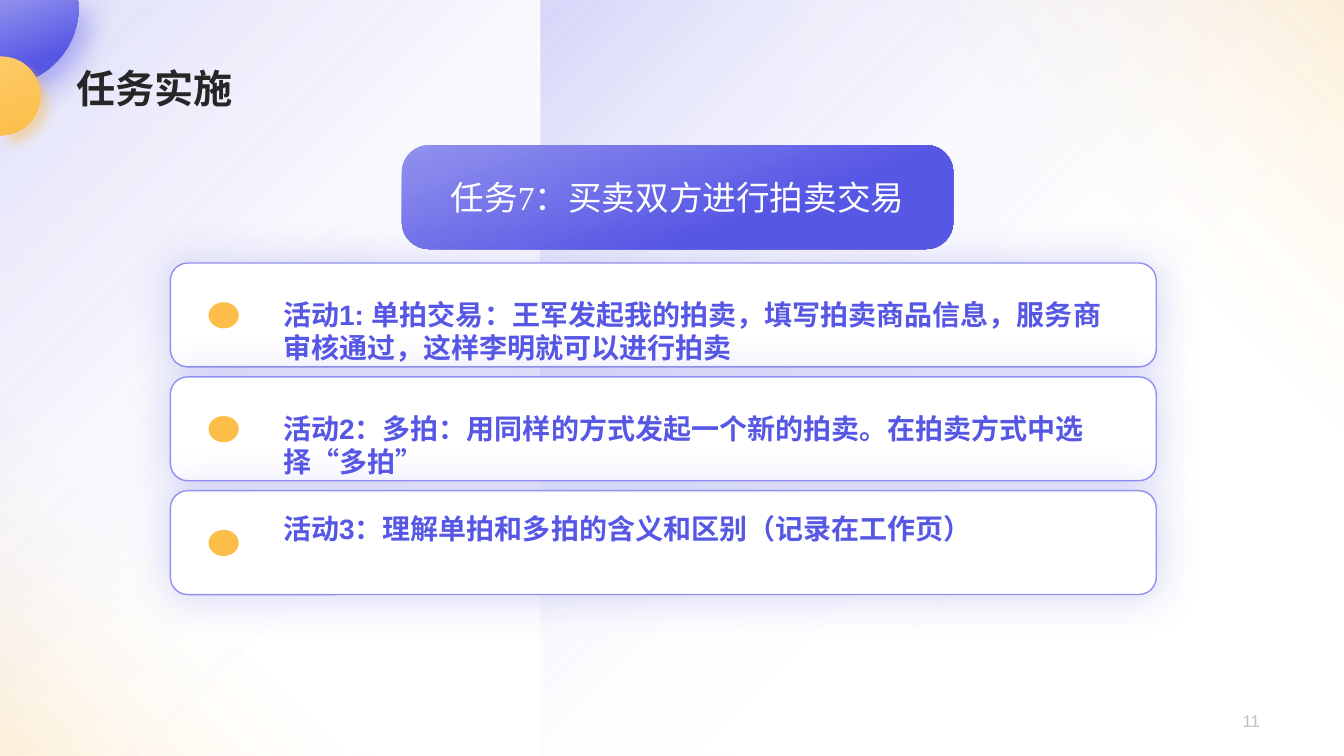
"""Build the auction task slide with its banner and three activity cards."""
from dataclasses import dataclass
from math import cos, radians, sin

from pptx import Presentation
from pptx.dml.color import RGBColor
from pptx.enum.shapes import MSO_SHAPE as Preset
from pptx.enum.text import MSO_ANCHOR as Anchor, MSO_AUTO_SIZE as AutoSize, PP_ALIGN as Align
from pptx.oxml import parse_xml
from pptx.oxml.ns import nsdecls, qn
from pptx.util import Pt

WIDTH, HEIGHT = 960, 540
INDIGO, LAVENDER = "5757E5", "9191EE"
AMBER, LIGHT_AMBER = "FCBE49", "FDCB67"
WHITE, DARK, GREY = "FFFFFF", "262626", "BFBFBF"


@dataclass(frozen=True)
class Stop:
    position: int
    color: str
    opacity: int = 100


@dataclass(frozen=True)
class Gradient:
    stops: tuple[Stop, ...]
    angle: int | None = None


@dataclass(frozen=True)
class Shadow:
    color: str
    opacity: int
    blur: float
    distance: float = 0
    angle: int = 0


@dataclass(frozen=True)
class Box:
    left: float
    top: float
    width: float
    height: float

    def lengths(self) -> tuple:
        return Pt(self.left), Pt(self.top), Pt(self.width), Pt(self.height)


@dataclass(frozen=True)
class Glow:
    box: Box
    gradient: Gradient
    flipped: bool = False


@dataclass(frozen=True)
class Disc:
    center_x: float
    center_y: float
    radius: float
    start_angle: float
    gradient: Gradient
    shadow: Shadow


@dataclass(frozen=True)
class Activity:
    text: str
    text_offset: float
    text_height: float


INDIGO_GLOW = Gradient((Stop(0, INDIGO, 20), Stop(65, WHITE, 0)))
AMBER_GLOW = Gradient((Stop(45, WHITE, 0), Stop(98, AMBER, 20)), 315)
INDIGO_FADE = Gradient((Stop(0, LAVENDER), Stop(66, INDIGO)), 70)
AMBER_FADE = Gradient((Stop(0, LIGHT_AMBER), Stop(100, AMBER)), 70)
CARD_SHADOW = Shadow(INDIGO, 25, 30)

GLOWS = (
    Glow(Box(0, 0, 564.5, HEIGHT), INDIGO_GLOW),
    Glow(Box(626.2, 0, 333.8, 348.5), AMBER_GLOW),
    Glow(Box(-1.2, 280.8, 288.7, 259.2), AMBER_GLOW, True),
    Glow(Box(386.4, 0, 573.6, HEIGHT), INDIGO_GLOW, True),
)
DISCS = (
    Disc(0, 5, 56.2, -5.1, INDIGO_FADE, Shadow(INDIGO, 40, 19, 11, 45)),
    Disc(0.7, 68.4, 28.1, -90, AMBER_FADE, Shadow(AMBER, 40, 7, 8, 45)),
)
ACTIVITIES = (
    Activity("活动1: 单拍交易：王军发起我的拍卖，填写拍卖商品信息，服务商审核通过，这样李明就可以进行拍卖", 20.9, 55.4),
    Activity("活动2：多拍：用同样的方式发起一个新的拍卖。在拍卖方式中选择“多拍”", 20.9, 55.4),
    Activity("活动3：理解单拍和多拍的含义和区别（记录在工作页）", 11.5, 31.7),
)
CARD = Box(121.7, 187.9, 704.2, 74.2)
CARD_PITCH = 81.3


def color_xml(color: str, opacity: int) -> str:
    return f'<a:srgbClr val="{color}"><a:alpha val="{opacity * 1000}"/></a:srgbClr>'


def gradient_xml(gradient: Gradient) -> str:
    stops = "".join(f'<a:gs pos="{stop.position * 1000}">{color_xml(stop.color, stop.opacity)}</a:gs>'
                    for stop in gradient.stops)
    if gradient.angle is None:
        direction = '<a:path path="circle"><a:fillToRect r="100000" b="100000"/></a:path>'
    else:
        direction = f'<a:lin ang="{gradient.angle * 60000}" scaled="0"/>'
    return f'<a:gradFill {nsdecls("a")} rotWithShape="1"><a:gsLst>{stops}</a:gsLst>{direction}</a:gradFill>'


def style(shape, fill: str | Gradient, line: str | None = None, shadow: Shadow | None = None) -> None:
    properties = shape._element.spPr
    if isinstance(fill, Gradient):
        shape.fill.background()
        properties.replace(properties.find(qn("a:noFill")), parse_xml(gradient_xml(fill)))
    else:
        shape.fill.solid()
        shape.fill.fore_color.rgb = RGBColor.from_string(fill)
    if line:
        shape.line.color.rgb = RGBColor.from_string(line)
        shape.line.width = Pt(1)
    else:
        shape.line.fill.background()
    shape.shadow.inherit = False
    if shadow:
        properties.find(qn("a:effectLst")).append(parse_xml(
            f'<a:outerShdw {nsdecls("a")} blurRad="{Pt(shadow.blur)}" dist="{Pt(shadow.distance)}" '
            f'dir="{shadow.angle * 60000}" algn="ctr" rotWithShape="0">'
            f'{color_xml(shadow.color, shadow.opacity)}</a:outerShdw>'))


def add_preset(shapes, preset: Preset, box: Box, fill: str | Gradient, **effects):
    shape = shapes.add_shape(preset, *box.lengths())
    style(shape, fill, **effects)
    return shape


def write(shape, text: str, *, size: float, color: str, font: str = "Arial", bold: bool = False,
          align: Align = Align.LEFT, anchor: Anchor = Anchor.TOP, auto_size: AutoSize = AutoSize.NONE,
          line_spacing: float | None = None) -> None:
    frame = shape.text_frame
    frame.word_wrap = True
    frame.auto_size = auto_size
    frame.vertical_anchor = anchor
    paragraph = frame.paragraphs[0]
    paragraph.alignment = align
    paragraph.line_spacing = line_spacing
    run = paragraph.add_run()
    run.text = text
    run.font.name, run.font.size, run.font.bold = font, Pt(size), bold
    run.font.color.rgb = RGBColor.from_string(color)


def add_glow(shapes, glow: Glow) -> None:
    shape = add_preset(shapes, Preset.RECTANGLE, glow.box, glow.gradient)
    if glow.flipped:
        for axis in ("flipH", "flipV"):
            shape._element.spPr.xfrm.set(axis, "1")


def add_disc(shapes, disc: Disc) -> None:
    steps = 48
    angles = [radians(disc.start_angle + (90 - disc.start_angle) * step / steps) for step in range(steps + 1)]
    arc = [(Pt(disc.center_x + disc.radius * cos(angle)), Pt(disc.center_y + disc.radius * sin(angle)))
           for angle in angles]
    builder = shapes.build_freeform(*arc[0], scale=1.0)
    builder.add_line_segments([*arc[1:], (0, arc[-1][1]), (0, arc[0][1])], close=True)
    style(builder.convert_to_shape(), disc.gradient, shadow=disc.shadow)


def add_activity(shapes, activity: Activity, top: float) -> None:
    members = shapes.add_group_shape().shapes
    add_preset(members, Preset.ROUNDED_RECTANGLE, Box(CARD.left, top, CARD.width, CARD.height), WHITE,
               line=LAVENDER, shadow=CARD_SHADOW)
    text_box = Box(195.1, top + activity.text_offset, 607, activity.text_height)
    write(members.add_textbox(*text_box.lengths()), activity.text, size=20, color=INDIGO, bold=True,
          auto_size=AutoSize.SHAPE_TO_FIT_TEXT)
    add_preset(members, Preset.OVAL, Box(149, top + 28, 21.6, 18.7), AMBER)


def main() -> None:
    presentation = Presentation()
    presentation.slide_width, presentation.slide_height = Pt(WIDTH), Pt(HEIGHT)
    slide = presentation.slides.add_slide(presentation.slide_layouts[5])
    shapes = slide.shapes
    for glow in GLOWS:
        add_glow(shapes, glow)
    for disc in DISCS:
        add_disc(shapes, disc)

    title = shapes.title
    shapes._spTree.append(title._element)
    title.left, title.top, title.width, title.height = Box(51.8, 46.1, 427.7, 39.6).lengths()
    title.text_frame.margin_left = Pt(2.9)
    write(title, "任务实施", size=28, color=DARK, bold=True, line_spacing=0.9)
    write(shapes.add_textbox(*Box(691.2, 500.4, 216, 28.8).lengths()), "11", size=12, color=GREY,
          align=Align.RIGHT, anchor=Anchor.MIDDLE)

    banner = add_preset(shapes, Preset.ROUNDED_RECTANGLE, Box(287.1, 103.7, 393.8, 74.2), INDIGO_FADE)
    banner.adjustments[0] = 0.26
    write(banner, "任务7：买卖双方进行拍卖交易", size=24, color=WHITE, font="Times New Roman",
          align=Align.CENTER, anchor=Anchor.MIDDLE)
    for index, activity in enumerate(ACTIVITIES):
        add_activity(shapes, activity, CARD.top + index * CARD_PITCH)
    presentation.save("out.pptx")


if __name__ == "__main__":
    main()
